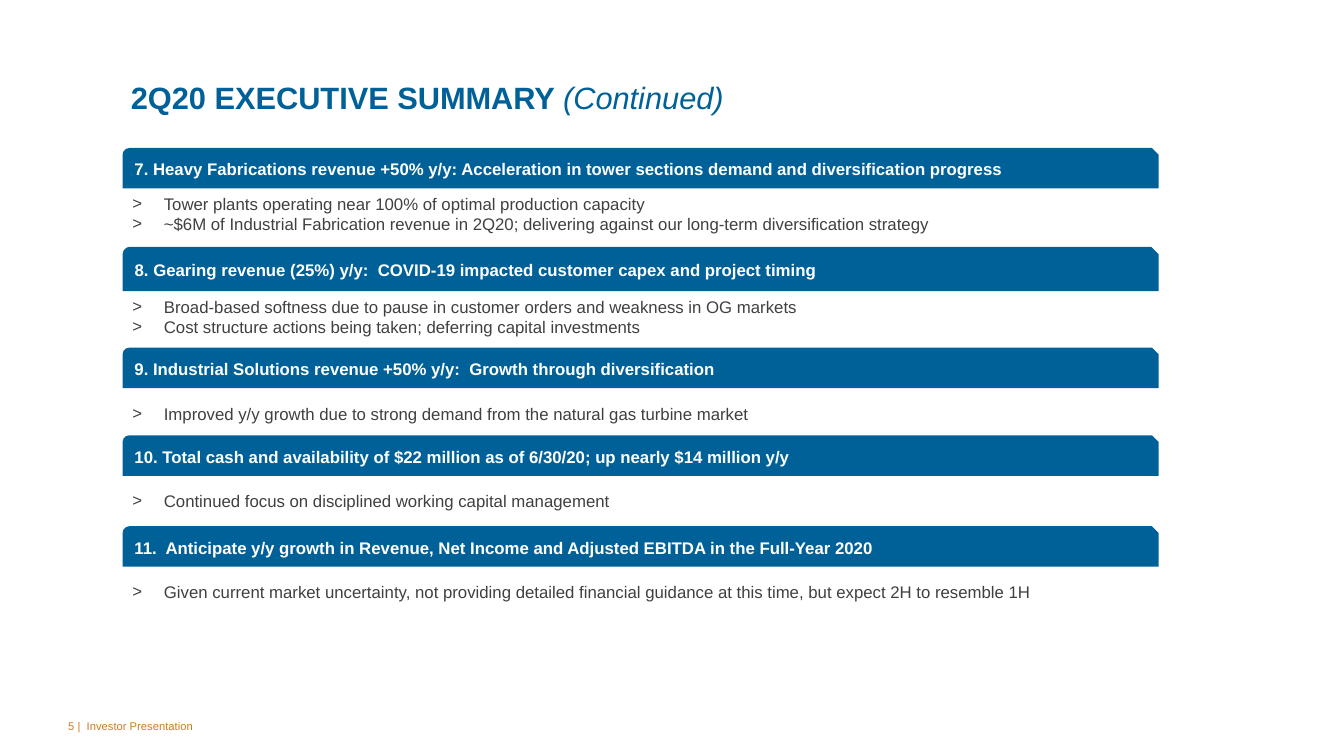
import pptx
import pptx.util
from lxml import etree
from pptx.dml.color import RGBColor
from pptx.enum.shapes import MSO_SHAPE
from pptx.enum.text import MSO_ANCHOR, PP_ALIGN
from pptx.oxml.ns import qn
from pptx.util import Cm, Pt

TITLE = ("2Q20 EXECUTIVE SUMMARY ", "(Continued)")
FOOTER = "5 |  Investor Presentation"
# bar top (cm), bar height (cm), heading, bullets
SECTIONS = [
    (3.73, 1.02,
     "7. Heavy Fabrications revenue +50% y/y: Acceleration in tower sections demand and diversification progress",
     ["Tower plants operating near 100% of optimal production capacity",
      "~$6M of Industrial Fabrication revenue in 2Q20; delivering against our long-term diversification strategy"]),
    (6.22, 1.12,
     "8. Gearing revenue (25%) y/y:  COVID-19 impacted customer capex and project timing",
     ["Broad-based softness due to pause in customer orders and weakness in OG markets",
      "Cost structure actions being taken; deferring capital investments"]),
    (8.76, 1.02,
     "9. Industrial Solutions revenue +50% y/y:  Growth through diversification",
     ["Improved y/y growth due to strong demand from the natural gas turbine market"]),
    (10.97, 1.02,
     "10. Total cash and availability of $22 million as of 6/30/20; up nearly $14 million y/y",
     ["Continued focus on disciplined working capital management"]),
    (13.26, 1.02,
     "11.  Anticipate y/y growth in Revenue, Net Income and Adjusted EBITDA in the Full-Year 2020",
     ["Given current market uncertainty, not providing detailed financial guidance at this time, "
      "but expect 2H to resemble 1H"]),
]

BLUE = RGBColor(0x00, 0x61, 0x98)
WHITE = RGBColor(0xFF, 0xFF, 0xFF)
GREY = RGBColor(0x40, 0x40, 0x40)
ORANGE = RGBColor(0xCE, 0x7B, 0x28)

LEFT, WIDTH = 3.09, 26.11
BODY_GAP, BODY_HEIGHT = 0.13, 1.02
BULLET_INDENT = Cm(0.79)


def style(font, size, color, bold=False, italic=False):
    font.name = "Arial"
    font.size = Pt(size)
    font.color.rgb = color
    font.bold = bold
    font.italic = italic


def add_block(slide, kind, top, height, fill, lines):
    block = slide.shapes.add_shape(kind, Cm(LEFT), Cm(top), Cm(WIDTH), Cm(height))
    block.shadow.inherit = False
    block.fill.solid()
    block.fill.fore_color.rgb = fill
    block.line.fill.background()
    frame = block.text_frame
    frame.word_wrap = True
    frame.vertical_anchor = MSO_ANCHOR.MIDDLE
    frame.text = "\n".join(lines)
    for paragraph in frame.paragraphs:
        paragraph.alignment = PP_ALIGN.LEFT
    return frame.paragraphs


def add_bullet(paragraph):
    properties = paragraph._p.get_or_add_pPr()
    properties.set("marL", str(BULLET_INDENT))
    properties.set("indent", str(-BULLET_INDENT))
    etree.SubElement(properties, qn("a:buFont"), typeface="Arial")
    etree.SubElement(properties, qn("a:buChar"), char=">")


def add_section(slide, top, height, heading, bullets):
    for paragraph in add_block(slide, MSO_SHAPE.SNIP_ROUND_RECTANGLE, top, height, BLUE, [heading]):
        style(paragraph.runs[0].font, 12, WHITE, bold=True)
    body_top = top + height + BODY_GAP
    for paragraph in add_block(slide, MSO_SHAPE.RECTANGLE, body_top, BODY_HEIGHT, WHITE, bullets):
        add_bullet(paragraph)
        style(paragraph.runs[0].font, 12, GREY)


def add_title(slide):
    frame = slide.shapes.add_textbox(Cm(3.3), Cm(1.32), Cm(27.46), Cm(1.6)).text_frame
    frame.word_wrap = True
    frame.vertical_anchor = MSO_ANCHOR.BOTTOM
    frame.margin_left = frame.margin_right = frame.margin_top = frame.margin_bottom = 0
    paragraph = frame.paragraphs[0]
    paragraph.line_spacing = 0.9
    for index, text in enumerate(TITLE):
        run = paragraph.add_run()
        run.text = text
        style(run.font, 22, BLUE, bold=index == 0, italic=index == 1)


def add_footer(slide):
    frame = slide.shapes.add_textbox(Cm(1.47), Cm(17.78), Cm(7.62), Cm(1.02)).text_frame
    frame.word_wrap = True
    frame.vertical_anchor = MSO_ANCHOR.MIDDLE
    frame.text = FOOTER
    style(frame.paragraphs[0].runs[0].font, 8, ORANGE)


def main():
    presentation = pptx.Presentation()
    presentation.slide_width = Cm(33.87)
    presentation.slide_height = Cm(19.05)
    slide = presentation.slides.add_slide(presentation.slide_layouts[6])
    add_title(slide)
    for section in SECTIONS:
        add_section(slide, *section)
    add_footer(slide)
    presentation.save("out.pptx")


if __name__ == "__main__":
    main()
